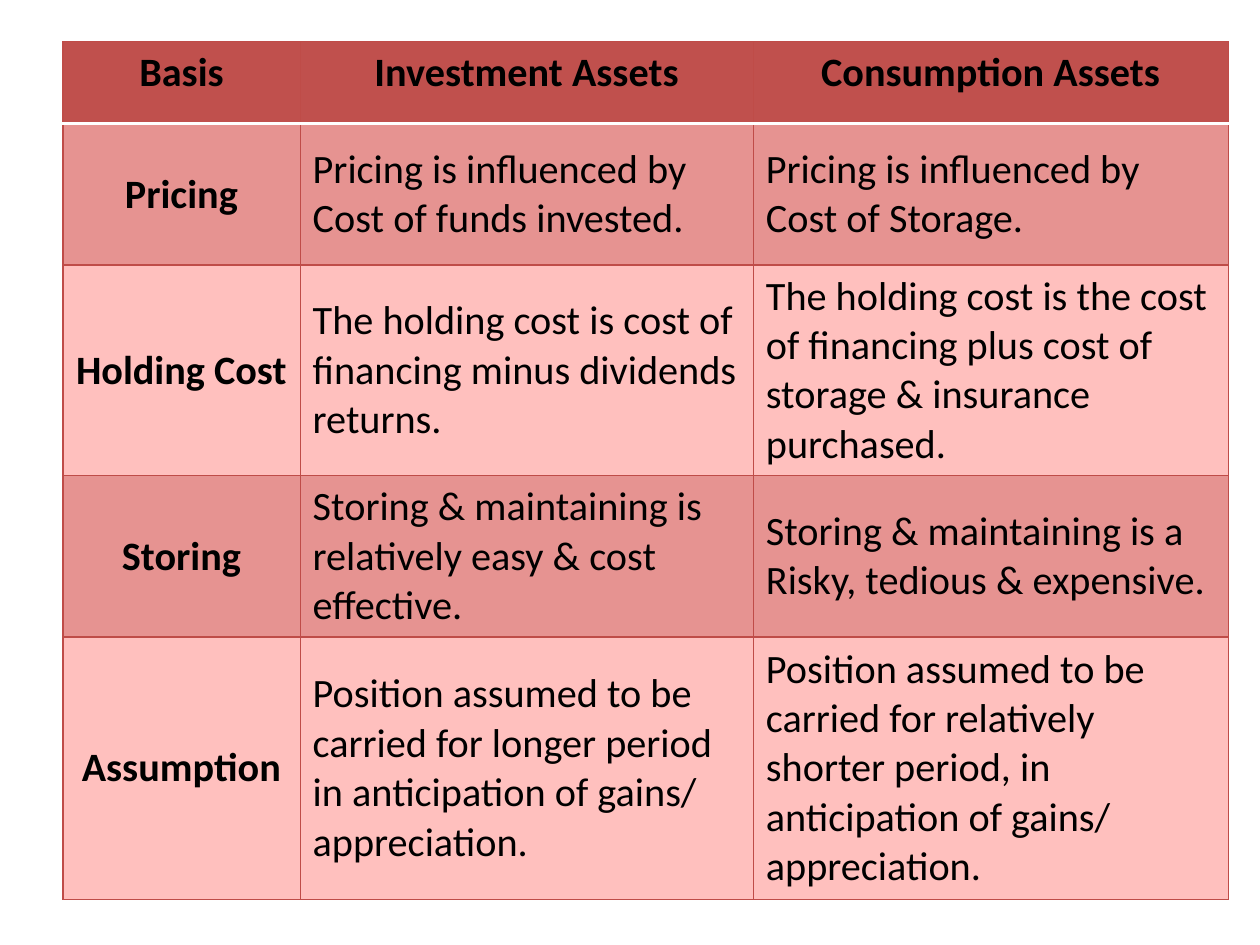
from lxml.etree import SubElement
from pptx import Presentation
from pptx.dml.color import RGBColor
from pptx.enum.text import MSO_ANCHOR, PP_ALIGN
from pptx.oxml.ns import qn
from pptx.util import Pt

COLORS = {
    "header": "C0504D",
    "dark band": "E69391",
    "light band": "FFC0BE",
    "border": "BF4C48",
    "header rule": "FFFFFF",
    "text": "000000",
}
COLUMN_WIDTHS = [135.5, 259, 271.5]
ROW_HEIGHTS = [46.8, 80.8, 120.4, 92.2, 150]
ROWS = [
    ("Basis", "Investment Assets", "Consumption Assets"),
    ("Pricing",
     "Pricing is influenced by Cost of funds invested.",
     "Pricing is influenced by Cost of Storage."),
    ("Holding Cost",
     "The holding cost is cost of financing minus dividends returns.",
     "The holding cost is the cost of financing plus cost of storage & "
     "insurance purchased."),
    ("Storing",
     "Storing & maintaining is relatively easy & cost effective.",
     "Storing & maintaining is a Risky, tedious & expensive."),
    ("Assumption",
     "Position assumed to be carried for longer period in anticipation of "
     "gains/ appreciation.",
     "Position assumed to be carried for relatively shorter period, in "
     "anticipation of gains/ appreciation."),
]


def write_text(cell, text, bold=False, align=PP_ALIGN.LEFT,
               anchor=MSO_ANCHOR.MIDDLE, size=23):
    cell.vertical_anchor = anchor
    para = cell.text_frame.paragraphs[0]
    para.alignment = align
    span = para.add_run()
    span.text = text
    span.font.name = "Calibri"
    span.font.size = Pt(size)
    span.font.bold = bold
    span.font.color.rgb = RGBColor.from_string(COLORS["text"])


def set_borders(cell, row):
    """Thin red lines all round, with a white rule below the header."""
    properties = cell._tc.get_or_add_tcPr()
    rule_side = {0: "lnB", 1: "lnT"}.get(row)
    for side in ("lnL", "lnR", "lnT", "lnB"):
        is_rule = side == rule_side
        line = SubElement(properties, qn(f"a:{side}"),
                          w=str(Pt(2 if is_rule else 0.75)))
        fill = SubElement(line, qn("a:solidFill"))
        SubElement(fill, qn("a:srgbClr"),
                   val=COLORS["header rule" if is_rule else "border"])


def band_color(row):
    if row == 0:
        return COLORS["header"]
    return COLORS["dark band" if row % 2 else "light band"]


def add_comparison_table(page, left, top, width, height):
    frame = page.shapes.add_table(len(ROWS), len(COLUMN_WIDTHS),
                                  Pt(left), Pt(top), Pt(width), Pt(height))
    table = frame.table
    table.horz_banding = False

    # Grid
    for column, column_width in zip(table.columns, COLUMN_WIDTHS):
        column.width = Pt(column_width)
    for table_row, row_height in zip(table.rows, ROW_HEIGHTS):
        table_row.height = Pt(row_height)

    # Cells: the header row and the first column are bold and centred
    for row, texts in enumerate(ROWS):
        for column, text in enumerate(texts):
            cell = table.cell(row, column)
            is_heading = row == 0 or column == 0
            write_text(cell, text, bold=is_heading,
                       align=PP_ALIGN.CENTER if is_heading else PP_ALIGN.LEFT,
                       anchor=MSO_ANCHOR.TOP if row == 0 else MSO_ANCHOR.MIDDLE)
            set_borders(cell, row)
            cell.fill.solid()
            cell.fill.fore_color.rgb = RGBColor.from_string(band_color(row))


def main():
    deck = Presentation()
    deck.slide_width, deck.slide_height = Pt(720), Pt(540)
    page = deck.slides.add_slide(deck.slide_layouts[6])
    add_comparison_table(page, 36, 23.8, sum(COLUMN_WIDTHS), sum(ROW_HEIGHTS))
    deck.save("out.pptx")


if __name__ == "__main__":
    main()
